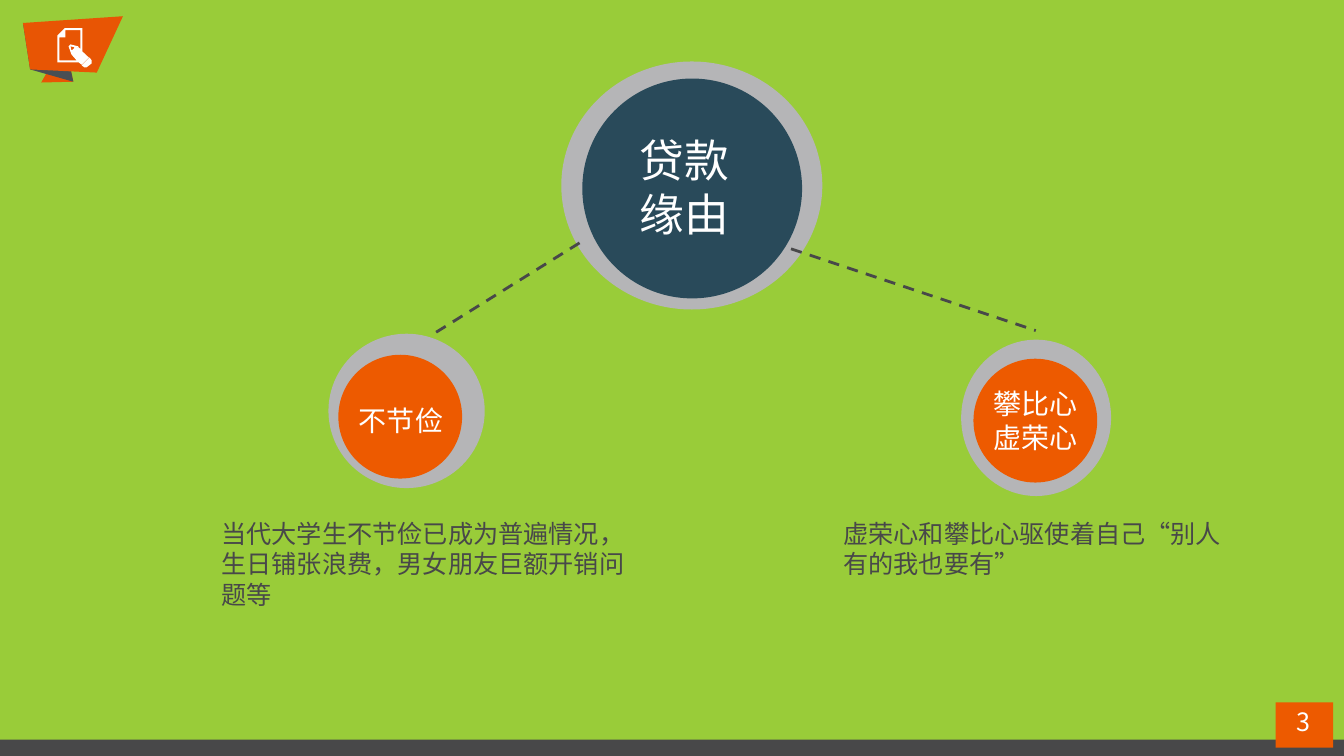
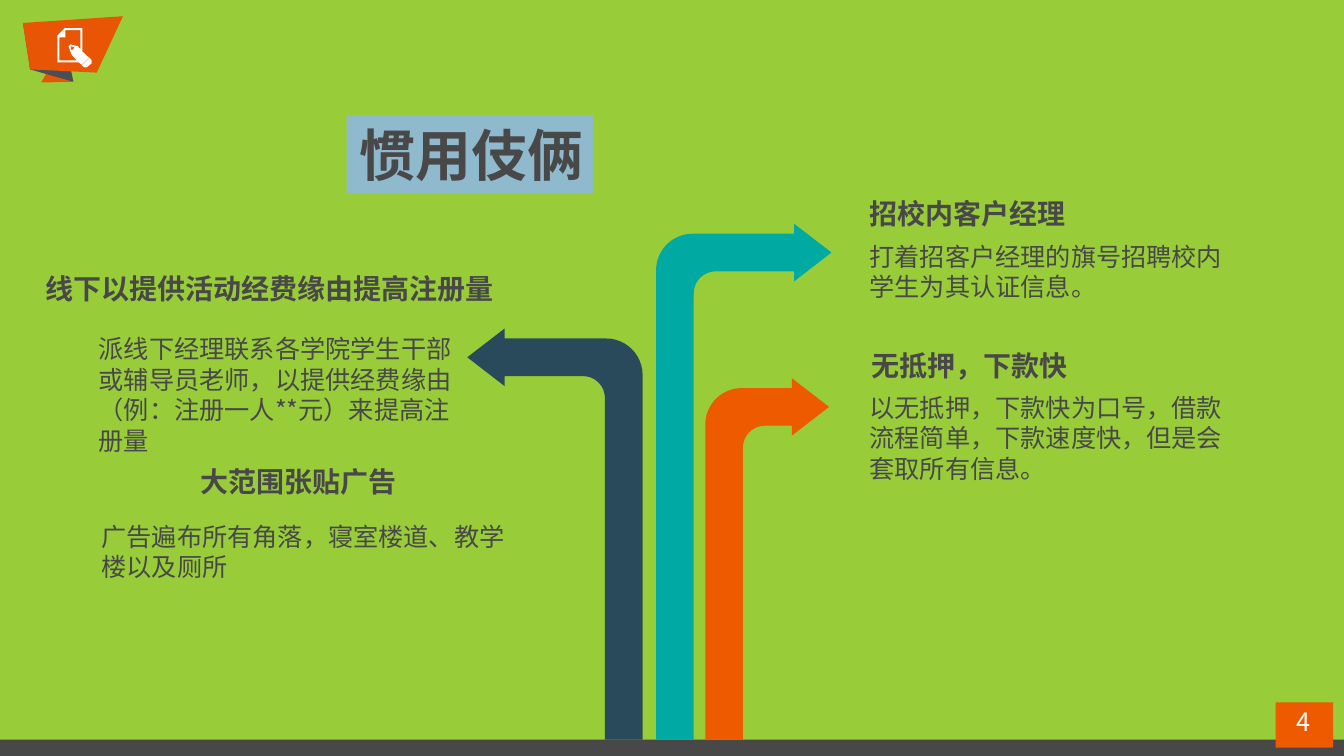
"""Build two slides on student loans: the reasons and the usual tricks."""
import math

from lxml import etree
from pptx import Presentation
from pptx import util as u
from pptx.dml.color import RGBColor
from pptx.enum import dml, lang, shapes, text
from pptx.oxml import ns

COLORS = {
    "background": "99CC39", "dark": "484849", "orange": "ED5A00", "badge": "E85504",
    "fold": "494F54", "ring": "B5B5B7", "navy": "294A5A", "teal": "00AAA2",
    "label": "8FBACE", "white": "FFFFFF",
}
FONT = "Noto Sans CJK SC"
LINE_HEIGHT = 1.21
WIDTH, HEIGHT, BAND_TOP = 33.88, 19.05, 18.64

BADGE = [
    ("badge", [[(1.85, 2.06), (1.63, 1.04), (1.04, 2.08)]]),
    ("fold", [[(1.63, 1.04), (0.58, 0.58), (0.76, 1.75), (1.85, 2.06)]]),
    ("badge", [[(3.1, 0.41), (0.58, 0.58), (0.76, 1.75), (2.44, 1.83)]]),
    ("white", [
        [(1.45, 0.89), (1.63, 0.71), (2.08, 0.71), (2.08, 1.3), (2.24, 1.45),
         (2.06, 1.63), (1.98, 1.57), (1.45, 1.57)],
        [(2.03, 0.76), (1.65, 0.76), (1.65, 0.94), (1.5, 0.94), (1.5, 1.52),
         (1.93, 1.52), (1.8, 1.37), (1.98, 1.19), (2.03, 1.24)],
        [(1.8, 1.37), (1.73, 1.17), (1.78, 1.12), (1.98, 1.17)],
        [(1.85, 1.24), (1.88, 1.19), (1.78, 1.17), (1.8, 1.27)],
        [(2.31, 1.6), (2.18, 1.7), (2.13, 1.7), (2.06, 1.65), (2.26, 1.45), (2.31, 1.52)],
    ]),
]

REASONS = {
    "number": "3",
    "title": ("贷款 缘由", (15.34, 3.2, 3.81, 3)),
    "links": [(19.94, 6.27, 26.11, 8.33), (14.61, 6.12, 10.82, 8.48)],
    "circles": [
        ("ring", (14.15, 1.55, 6.58, 6.25)), ("navy", (14.68, 1.98, 5.54, 5.54)),
        ("ring", (8.28, 8.41, 3.94, 3.89)), ("orange", (8.53, 8.94, 3.12, 3.12)),
        ("ring", (24.23, 8.56, 3.78, 3.94)), ("orange", (24.54, 9.04, 3.12, 3.12)),
    ],
    "texts": [
        ("circle", "攀比心虚荣心", (24.69, 9.6, 2.84, 1.96)),
        ("circle", "不节俭", (8.69, 10.03, 2.84, 1.12)),
        ("body", "当代大学生不节俭已成为普遍情况，生日铺张浪费，男女朋友巨额开销问题等",
         (5.33, 12.93, 11, 2.57)),
        ("quote", "虚荣心和攀比心驱使着自己“别人有的我也要有”", (21.01, 12.93, 10.21, 1.8)),
    ],
}
TRICKS = {
    "number": "4",
    "title": ("惯用伎俩", (8.74, 2.9, 6.22, 1.96)),
    "arrows": [
        ("teal", 16.54, 5.64, 4.42, 1),
        ("orange", 17.78, 9.53, 3.12, 1),
        ("navy", 16.2, 8.28, 4.42, -1),
    ],
    "texts": [
        ("heading", "无抵押，下款快", (21.72, 8.66, 7.21, 1.12)),
        ("body", "以无抵押，下款快为口号，借款流程简单，下款速度快，但是会套取所有信息。",
         (21.67, 9.75, 9.47, 2.57)),
        ("heading", "招校内客户经理", (21.67, 4.83, 5.54, 1.12)),
        ("body", "打着招客户经理的旗号招聘校内学生为其认证信息。", (21.67, 5.94, 9.47, 1.8)),
        ("heading right", "线下以提供活动经费缘由提高注册量", (0.58, 6.71, 12.12, 1.12)),
        ("body", "派线下经理联系各学院学生干部或辅导员老师，以提供经费缘由（例：注册一人**元）来提高注册量",
         (2.24, 8.28, 9.47, 3.33)),
        ("heading right", "大范围张贴广告", (4.32, 11.58, 5.94, 1.12)),
        ("body", "广告遍布所有角落，寝室楼道、教学楼以及厕所", (2.31, 13, 10.67, 1.8)),
    ],
}
LEFT, CENTER, RIGHT = text.PP_ALIGN.LEFT, text.PP_ALIGN.CENTER, text.PP_ALIGN.RIGHT
STYLES = {
    "hub": (32, "white", False, CENTER, FONT),
    "circle": (20, "white", False, CENTER, FONT),
    "number": (18, "white", False, CENTER, FONT),
    "body": (18, "dark", False, LEFT, FONT),
    "quote": (18, "dark", False, LEFT, "Arial"),
    "heading": (20, "dark", True, LEFT, FONT),
    "heading right": (20, "dark", True, RIGHT, FONT),
    "banner": (40, "dark", True, RIGHT, FONT),
}


def rgb(name):
    return RGBColor.from_string(COLORS[name])


def paint(shape, color):
    shape.shadow.inherit = False
    shape.fill.solid()
    shape.fill.fore_color.rgb = rgb(color)
    shape.line.fill.background()
    return shape


def add_preset(slide, preset, color, box):
    return paint(slide.shapes.add_shape(preset, *map(u.Cm, box)), color)


def add_outline(slide, color, contours):
    contours = [[(u.Cm(x), u.Cm(y)) for x, y in contour] for contour in contours]
    builder = slide.shapes.build_freeform(*contours[0][0])
    for index, contour in enumerate(contours):
        if index:
            builder.move_to(*contour[0])
        builder.add_line_segments(contour[1:], close=True)
    return paint(builder.convert_to_shape(), color)


def write(shape, content, style):
    size, color, bold, alignment, font_name = STYLES[style]
    frame = shape.text_frame
    frame.word_wrap = True
    frame.auto_size = text.MSO_AUTO_SIZE.NONE
    frame.vertical_anchor = text.MSO_ANCHOR.TOP
    paragraph = frame.paragraphs[0]
    paragraph.alignment = alignment
    paragraph.line_spacing = u.Pt(size * LINE_HEIGHT)
    run = paragraph.add_run()
    run.text = content
    font = run.font
    font.size, font.bold, font.name = u.Pt(size), bold, font_name
    font.color.rgb = rgb(color)
    font.language_id = lang.MSO_LANGUAGE_ID.SIMPLIFIED_CHINESE
    latin = font._element.find(ns.qn("a:latin"))
    east_asian = etree.Element(ns.qn("a:ea"), typeface=FONT)
    latin.addnext(east_asian)


def add_text(slide, style, content, box):
    write(slide.shapes.add_textbox(*map(u.Cm, box)), content, style)


def add_title(slide, content, box, style):
    title = slide.shapes.title
    title.left, title.top, title.width, title.height = map(u.Cm, box)
    write(title, content, style)
    slide.shapes.element.append(title.element)
    return title


def add_link(slide, ends):
    link = slide.shapes.add_connector(shapes.MSO_CONNECTOR.STRAIGHT, *map(u.Cm, ends))
    link.line.color.rgb = rgb("dark")
    link.line.width = u.Cm(0)
    link.line.dash_style = dml.MSO_LINE.DASH
    etree.SubElement(link.element.spPr, ns.qn("a:effectLst"))


def corner(center, radius, steps=12):
    """Quarter circle from the outer side up to the top."""
    angles = [math.pi / 2 * step / steps for step in range(steps + 1)]
    return [(center[0] - radius * math.cos(a), center[1] - radius * math.sin(a))
            for a in angles]


def add_bent_arrow(slide, color, outer, top, reach, direction):
    shaft, overhang, head, outer_radius, inner_radius = 0.95, 0.25, 0.94, 0.92, 0.55
    bottom, neck, lower = BAND_TOP - top, reach - head, overhang + shaft
    tip = overhang + shaft / 2
    points = [
        (0, bottom),
        *corner((outer_radius, overhang + outer_radius), outer_radius),
        (neck, overhang), (neck, 0), (reach, tip), (neck, 2 * tip), (neck, lower),
        *reversed(corner((shaft + inner_radius, lower + inner_radius), inner_radius)),
        (shaft, bottom),
    ]
    add_outline(slide, color, [[(outer + direction * x, top + y) for x, y in points]])


def add_shared_parts(layout, slide):
    """Draw the band, number box and badge, then move them to the layout."""
    for placeholder in list(layout.placeholders)[1:]:
        placeholder.element.getparent().remove(placeholder.element)
    rectangle = shapes.MSO_SHAPE.RECTANGLE
    parts = [
        add_preset(slide, rectangle, "dark", (0, BAND_TOP, WIDTH, HEIGHT - BAND_TOP)),
        add_preset(slide, rectangle, "orange", (32.16, 17.7, 1.45, 1.14)),
    ]
    parts += [add_outline(slide, color, contours) for color, contours in BADGE]
    for part in parts:
        layout.shapes.element.append(part.element)


def add_content(slide, content):
    add_text(slide, "number", content["number"], (32.18, 17.68, 1.37, 1.02))
    for color, box in content.get("circles", []):
        add_preset(slide, shapes.MSO_SHAPE.OVAL, color, box)
    for ends in content.get("links", []):
        add_link(slide, ends)
    for arrow in content.get("arrows", []):
        add_bent_arrow(slide, *arrow)
    for item in content["texts"]:
        add_text(slide, *item)


def main():
    presentation = Presentation()
    presentation.slide_width, presentation.slide_height = u.Cm(WIDTH), u.Cm(HEIGHT)
    background = presentation.slide_master.background.fill
    background.solid()
    background.fore_color.rgb = rgb("background")
    layout = presentation.slide_layouts[5]

    reasons, tricks = (presentation.slides.add_slide(layout) for _ in range(2))
    add_shared_parts(layout, reasons)
    add_content(reasons, REASONS)
    add_title(reasons, *REASONS["title"], "hub")
    add_content(tricks, TRICKS)
    paint(add_title(tricks, *TRICKS["title"], "banner"), "label")
    presentation.save("out.pptx")


if __name__ == "__main__":
    main()
